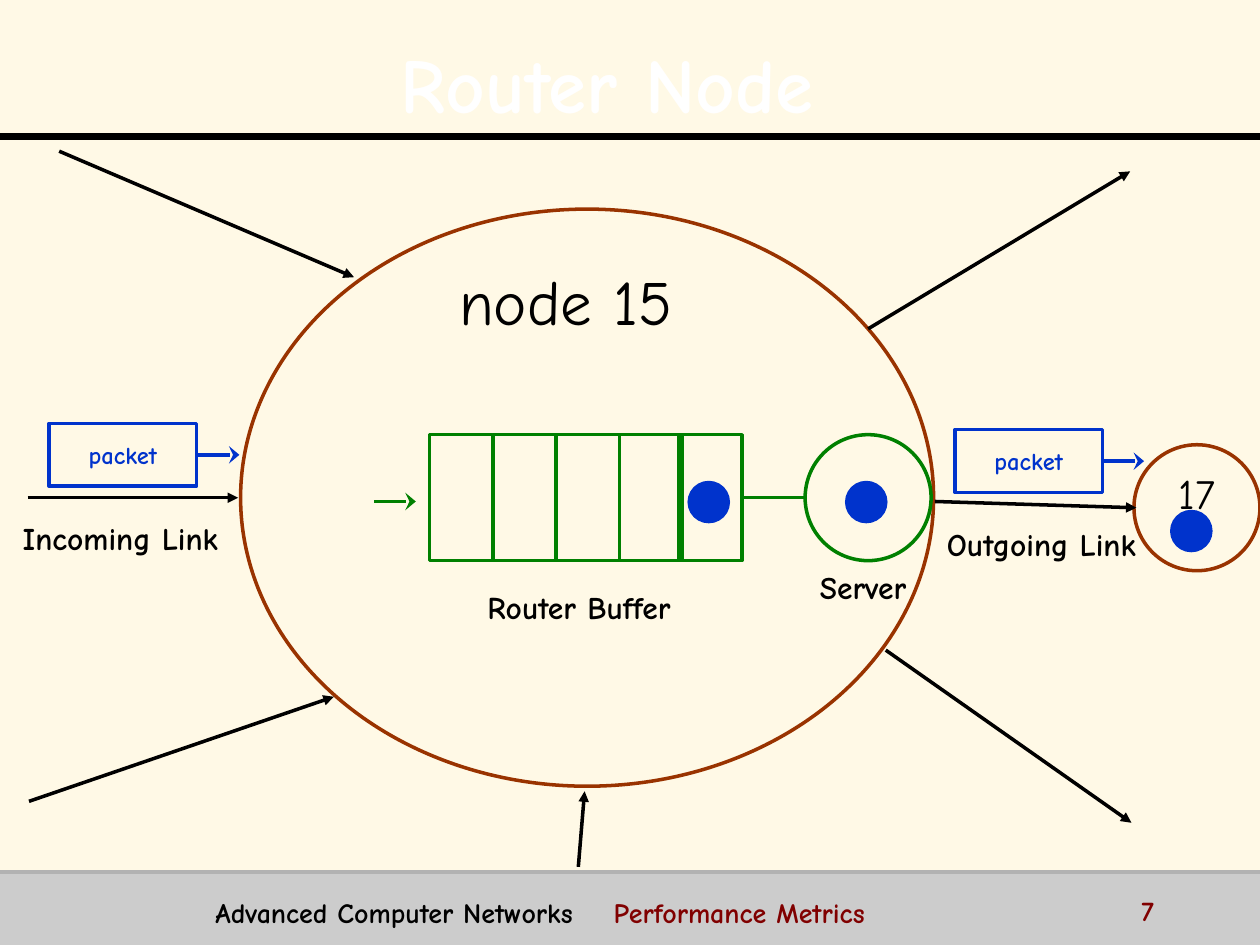
import pptx
import pptx.dml.color
import pptx.enum.shapes
import pptx.enum.text
import pptx.oxml
import pptx.oxml.ns
import pptx.util

THEME = {
    "font": "Comic Neue",
    "paper": "FFF9E6", "band": "CCCCCC", "rule": "B2B2B2",
    "black": "000000", "white": "FFFFFF", "maroon": "800000",
    "node": "993300", "queue": "008000", "packet": "0033CC",
    "title": 44, "heading": 36, "number": 24, "label": 18, "footer": 16, "small": 14,
}
COLUMNS, ROWS = 100, 75
SHAPE = pptx.enum.shapes.MSO_SHAPE
ALIGN = pptx.enum.text.PP_ALIGN
ANCHOR = pptx.enum.text.MSO_ANCHOR
DRAWING = pptx.oxml.ns.nsdecls("a")

deck = pptx.Presentation()
deck.slide_width = pptx.util.Inches(10)
deck.slide_height = pptx.util.Inches(7.5)
column = deck.slide_width // COLUMNS
row = deck.slide_height // ROWS
page = deck.slides.add_slide(deck.slide_layouts[6])


def rgb(name):
    return pptx.dml.color.RGBColor.from_string(THEME[name])


def add_box(kind, left, top, width, height, line=None, fill=None,
            text="", size="label", color="black", bold=True, align=ALIGN.CENTER):
    """Add a preset shape, or a text box when kind is None, placed in grid columns and rows."""
    frame = [round(n) for n in (left * column, top * row, width * column, height * row)]
    if kind is None:
        box = page.shapes.add_textbox(*frame)
    else:
        box = page.shapes.add_shape(kind, *frame)
        box.shadow.inherit = False
        if fill:
            box.fill.solid()
            box.fill.fore_color.rgb = rgb(fill)
        else:
            box.fill.background()
        if line:
            box.line.color.rgb = rgb(line)
            box.line.width = pptx.util.Pt(2)
        else:
            box.line.fill.background()
    if text:
        box.text_frame.text = text
        box.text_frame.word_wrap = False
        centred = align == ALIGN.CENTER
        box.text_frame.vertical_anchor = ANCHOR.MIDDLE if centred else ANCHOR.TOP
        para = box.text_frame.paragraphs[0]
        para.alignment = align
        font = para.runs[0].font
        font.name, font.size, font.bold = THEME["font"], pptx.util.Pt(THEME[size]), bold
        font.color.rgb = rgb(color)
    return box


page.background.fill.solid()
page.background.fill.fore_color.rgb = rgb("paper")

# Title and footer
add_box(None, 0, 0, 1, 1)._element.getparent().remove(page.shapes[-1]._element)
add_box(SHAPE.RECTANGLE, 0, 69.2, COLUMNS, 5.8, fill="band")
title = add_box(None, 6.7, 0.8, 85, 10.8, text="Router Node", size="title", color="white")
title.text_frame.margin_right = 3 * column
title_para = title.text_frame.paragraphs[0]
title_para.line_spacing = 1.1
title_fill = title_para.runs[0].font._element.find(pptx.oxml.ns.qn("a:solidFill"))
title_fill.addnext(pptx.oxml.parse_xml(
    f'<a:effectLst {DRAWING}><a:outerShdw dist="25400" dir="2700000">'
    f'<a:srgbClr val="{THEME["black"]}"/></a:outerShdw></a:effectLst>'))

footer = add_box(None, 15.3, 70.6, 72.8, 3.1, text="Advanced Computer Networks",
                 size="footer", align=ALIGN.LEFT)
footer.text_frame.margin_left = round(1.8 * column)
footer_para = footer.text_frame.paragraphs[0]
footer_para._p.get_or_add_pPr().append(pptx.oxml.parse_xml(
    f'<a:tabLst {DRAWING}><a:tab pos="{round(31.6 * column)}" algn="l"/></a:tabLst>'))
topic = footer_para.add_run()
topic.text = "\tPerformance Metrics"
topic.font.name, topic.font.bold = THEME["font"], True
topic.font.size = pptx.util.Pt(THEME["footer"])
topic.font.color.rgb = rgb("maroon")
add_box(None, 89.6, 70.4, 10, 2.5, text="7", size="footer", color="maroon", align=ALIGN.LEFT)

# Nodes
add_box(SHAPE.OVAL, 19.1, 16.6, 55, 45.8, line="node")
node_name = add_box(None, 36, 18.7, 20.2, 10.2, text="node 15", size="heading", bold=False)
node_name.text_frame.margin_left = 0
node_name.text_frame.margin_right = round(2.4 * column)
neighbour = add_box(SHAPE.OVAL, 90, 35.3, 10, 10, line="node",
                    text="17", size="number", bold=False)
neighbour.text_frame.margin_top = 0
neighbour.text_frame.margin_bottom = round(2.4 * row)

# Router buffer, server and the packets they hold
for left in [34.1 + 5.03 * slot for slot in range(4)] + [53.9]:
    last_slot = add_box(SHAPE.RECTANGLE, left, 34.5, 5, 10, line="queue")
add_box(SHAPE.OVAL, 63.9, 34.5, 10, 10, line="queue")
for left, top in [(54.7, 38.3), (67.2, 38.3), (93, 40.6)]:
    add_box(SHAPE.OVAL, left, top, 3.1, 3.1, line="packet", fill="packet")
incoming, outgoing = [
    add_box(SHAPE.RECTANGLE, left, top, 11.7, 5, line="packet",
            text="packet", size="small", color="packet")
    for left, top in [(3.9, 33.6), (75.8, 34.1)]]

for text, left, top, width in [
    ("Incoming Link", 0.8, 40.6, 17.5),
    ("Outgoing Link", 73.9, 41.1, 17.5),
    ("Router Buffer", 37.2, 46.1, 17.5),
    ("Server", 63.1, 44.5, 10.8),
]:
    add_box(None, left, top, width, 4.2, text=text)

# Lines: start box or None, from, to, colour, width, arrowhead
link_ends = [
    ((74.2, 39.8), (90.2, 40.3)), ((68.9, 26.1), (89.7, 13.6)),
    ((70.3, 51.6), (89.8, 65.3)), ((2.2, 39.5), (18.9, 39.5)),
    ((4.7, 12), (28.1, 22)), ((2.3, 63.6), (26.5, 55.3)), ((45.9, 68.8), (46.4, 62.8)),
]
lines = [(None, start, end, "black", 2, "triangle") for start, end in link_ends] + [
    (None, (0, 10.8), (COLUMNS, 10.8), "black", 4, None),
    (None, (0, 69.2), (COLUMNS, 69.2), "rule", 2, None),
    (None, (29.7, 39.8), (33, 39.8), "queue", 2, "stealth"),
    (last_slot, (58.9, 39.5), (63.9, 39.5), "queue", 2, None),
    (incoming, (15.6, 36.1), (19, 36.1), "packet", 2, "stealth"),
    (outgoing, (87.5, 36.6), (90.8, 36.6), "packet", 2, "stealth"),
]
for start_box, (x1, y1), (x2, y2), color, width, head in lines:
    connector = page.shapes.add_connector(
        pptx.enum.shapes.MSO_CONNECTOR.STRAIGHT,
        round(x1 * column), round(y1 * row), round(x2 * column), round(y2 * row))
    if start_box is not None:
        connector.begin_connect(start_box, 3)
    connector.line.color.rgb = rgb(color)
    connector.line.width = pptx.util.Pt(width)
    if head:
        breadth = "lg" if head == "stealth" else "med"
        connector.line._get_or_add_ln().append(pptx.oxml.parse_xml(
            f'<a:tailEnd {DRAWING} type="{head}" w="{breadth}" len="med"/>'))
    connector._element.spPr.append(pptx.oxml.parse_xml(f"<a:effectLst {DRAWING}/>"))

deck.save("out.pptx")
